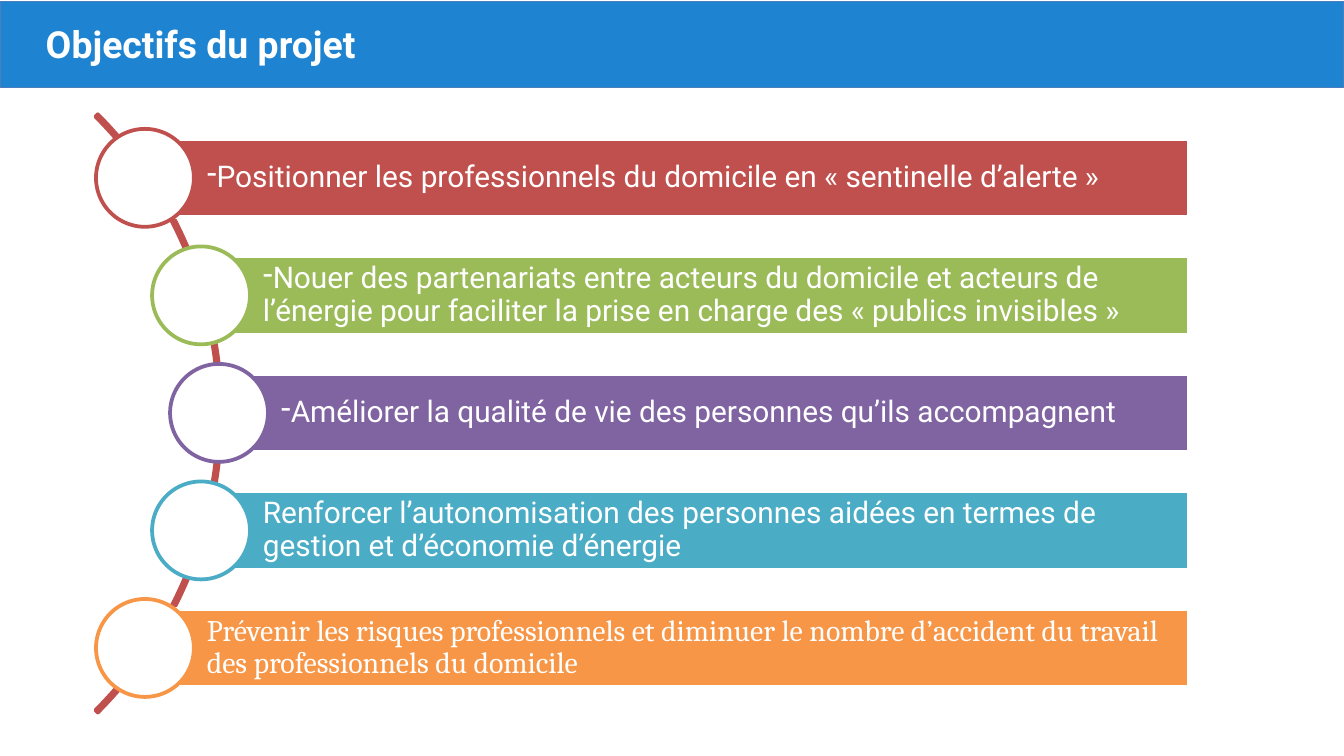
import pptx
import pptx.util
import pptx.dml.color
import pptx.enum.shapes
import pptx.enum.text
import lxml.etree
from pptx.util import Cm, Pt

COLOURS = {
    "header": "1E84D1",
    "header_line": "4B7EBC",
    "white": "FFFFFF",
    "red": "C0504D",
    "green": "9BBB59",
    "purple": "8064A2",
    "teal": "4BACC6",
    "orange": "F79646",
}
TITLE = "Objectifs du projet"
OBJECTIVES = [
    ("Positionner les professionnels du domicile en « sentinelle d’alerte »",
     "red", 2.74, True, "Roboto"),
    ("Nouer des partenariats entre acteurs du domicile et acteurs de l’énergie "
     "pour faciliter la prise en charge des « publics invisibles »",
     "green", 3.8, True, "Roboto"),
    ("Améliorer la qualité de vie des personnes qu’ils accompagnent",
     "purple", 4.14, True, "Roboto"),
    ("Renforcer l’autonomisation des personnes aidées en termes de gestion "
     "et d’économie d’énergie",
     "teal", 3.8, False, "Roboto"),
    ("Prévenir les risques professionnels et diminuer le nombre d’accident "
     "du travail des professionnels du domicile",
     "orange", 2.74, False, "Cambria"),
]
FIRST_CENTRE, PITCH = 3.36, 2.22
BAR_RIGHT, BAR_HEIGHT, CIRCLE = 22.47, 1.48, 1.85
SHAPES = pptx.enum.shapes.MSO_SHAPE
ANCHOR = pptx.enum.text.MSO_ANCHOR
ALIGN = pptx.enum.text.PP_ALIGN


def rgb(name):
    return pptx.dml.color.RGBColor.from_string(COLOURS[name])


def add_shape(page, kind, left, top, width, height, fill, line, weight=2):
    shape = page.shapes.add_shape(kind, Cm(left), Cm(top), Cm(width), Cm(height))
    shape.shadow.inherit = False
    shape.fill.solid()
    shape.fill.fore_color.rgb = rgb(fill)
    shape.line.color.rgb = rgb(line)
    shape.line.width = Pt(weight)
    return shape


def format_text(para, font_name, size, bold=False):
    para.alignment = ALIGN.LEFT
    for span in para.runs:
        span.font.name = font_name
        span.font.size = Pt(size)
        span.font.bold = bold
        span.font.color.rgb = rgb("white")


def add_dash(para):
    properties = para._p.get_or_add_pPr()
    properties.set("marL", "0")
    properties.set("indent", "0")
    bullet = lxml.etree.SubElement(properties, pptx.oxml.ns.qn("a:buChar"))
    bullet.set("char", "-")


def add_title(page):
    title = page.shapes.title
    title.left, title.top, title.width, title.height = Cm(0.61), Cm(0.28), Cm(24.13), Cm(1.6)
    frame = title.text_frame
    frame.text = TITLE
    frame.word_wrap = True
    frame.auto_size = pptx.enum.text.MSO_AUTO_SIZE.NONE
    frame.vertical_anchor = ANCHOR.TOP
    format_text(frame.paragraphs[0], "Roboto", 20, True)
    page.shapes._spTree.append(title._element)


def add_objective(page, centre, text, colour, left, dashed, font_name):
    bar = add_shape(page, SHAPES.RECTANGLE, left, centre - BAR_HEIGHT / 2,
                    BAR_RIGHT - left, BAR_HEIGHT, colour, "white")
    frame = bar.text_frame
    frame.word_wrap = True
    frame.vertical_anchor = ANCHOR.MIDDLE
    frame.margin_left = Cm(1.17)
    frame.margin_right = frame.margin_top = frame.margin_bottom = Cm(0.1)
    frame.text = text
    para = frame.paragraphs[0]
    para.line_spacing = 0.9
    if dashed:
        add_dash(para)
    format_text(para, font_name, 16)
    add_shape(page, SHAPES.OVAL, left - CIRCLE / 2, centre - CIRCLE / 2,
              CIRCLE, CIRCLE, "white", colour)


def main():
    deck = pptx.Presentation()
    deck.slide_width, deck.slide_height = Cm(25.4), Cm(14.28)
    page = deck.slides.add_slide(deck.slide_layouts[5])
    add_shape(page, SHAPES.RECTANGLE, 0, 0.03, 25.4, 1.63, "header", "header_line", 0.75)
    add_title(page)
    arc = add_shape(page, SHAPES.BLOCK_ARC, -11.79, -0.18, 15.98, 15.98, "red", "red")
    for index, value in enumerate((189, 27, 0.004)):
        arc.adjustments[index] = value
    for index, objective in enumerate(OBJECTIVES):
        add_objective(page, FIRST_CENTRE + index * PITCH, *objective)
    deck.save("out.pptx")


if __name__ == "__main__":
    main()
